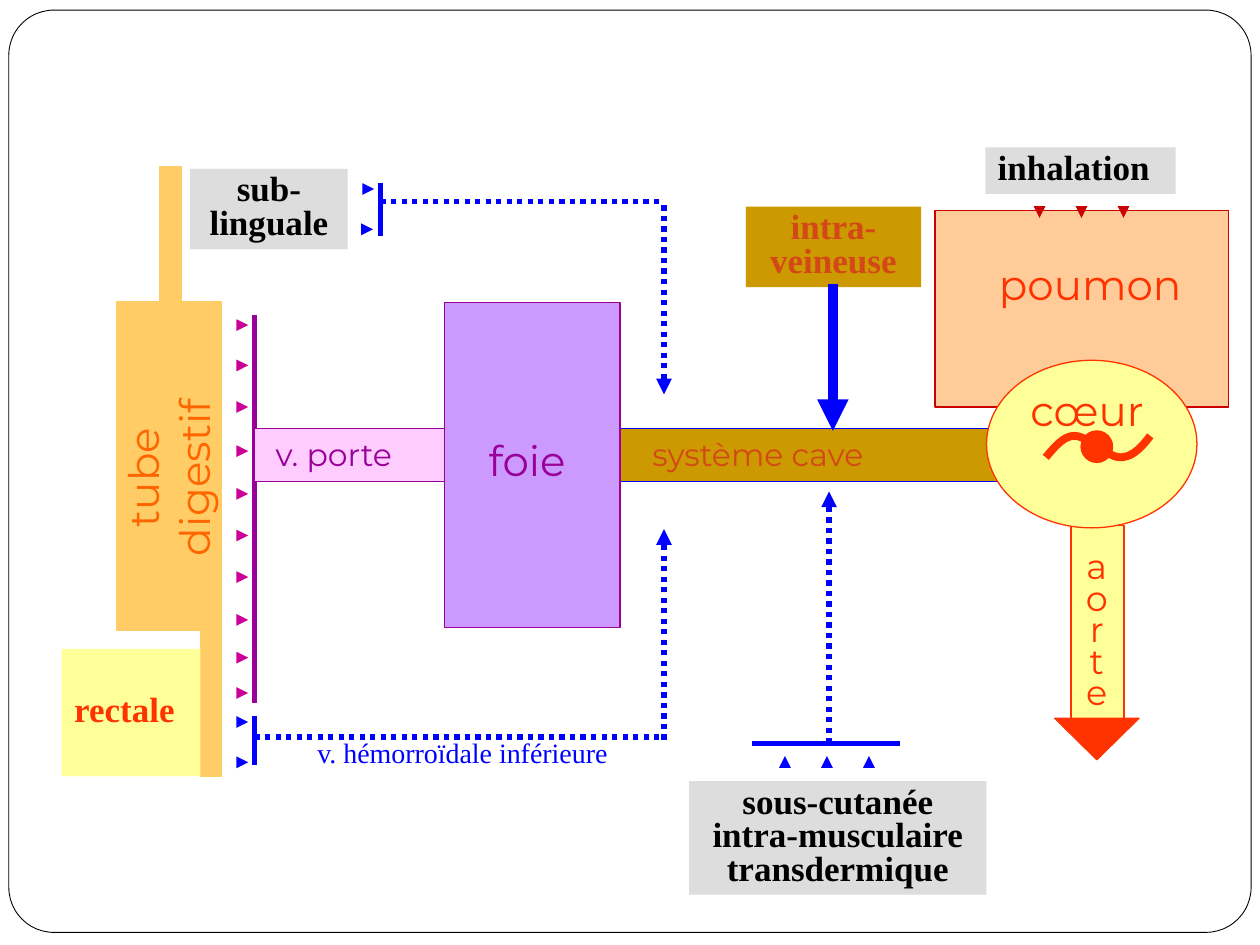
from dataclasses import dataclass

from lxml import etree
from pptx import Presentation
from pptx.dml.color import RGBColor
from pptx.enum import dml, shapes, text
from pptx.oxml import ns
from pptx.util import Inches, Pt

KIND = shapes.MSO_SHAPE
MID = text.PP_ALIGN.CENTER


@dataclass(frozen=True)
class Theme:
    sans: str = "Montserrat"
    serif: str = "Times New Roman"
    big: int = 24
    label: int = 20
    vein: int = 18
    note: int = 16
    black: str = "000000"
    white: str = "FFFFFF"
    grey: str = "DDDDDD"
    blue: str = "0000FF"
    red: str = "FF3300"
    dark: str = "CC0000"
    peach: str = "FFCC99"
    sand: str = "FFCC66"
    orange: str = "FF6600"
    yellow: str = "FFFF99"
    pink: str = "FFCCFF"
    lilac: str = "CC99FF"
    purple: str = "990099"
    rose: str = "CC0099"
    ochre: str = "CC9900"
    rust: str = "D34817"


T = Theme()


def rgb(code):
    return RGBColor.from_string(code)


class Box:
    """A region of the slide; all places are measured from its corner."""

    def __init__(self, slide, left, top):
        self.pool, self.left, self.top = slide.shapes, left, top

    def spot(self, x, y):
        return Inches(self.left + x), Inches(self.top + y)

    def shape(self, x, y, w, h, fill, line=None, kind=KIND.RECTANGLE, width=0.75):
        item = self.pool.add_shape(kind, *self.spot(x, y), Inches(w), Inches(h))
        item.shadow.inherit = False
        item.fill.solid()
        item.fill.fore_color.rgb = rgb(fill)
        if line:
            item.line.color.rgb = rgb(line)
            item.line.width = Pt(width)
        else:
            item.line.fill.background()
        return item

    def words(self, x, y, w, h, lines, size, color, font=T.sans, align=None,
              gap=None, bold=False, fill=None, anchor=text.MSO_ANCHOR.TOP):
        item = self.pool.add_textbox(*self.spot(x, y), Inches(w), Inches(h))
        if fill:
            item.fill.solid()
            item.fill.fore_color.rgb = rgb(fill)
        frame = item.text_frame
        frame.word_wrap = False
        frame.vertical_anchor = anchor
        frame.text = "\n".join(lines)
        for para in frame.paragraphs:
            para.alignment, para.line_spacing = align, gap
            para.font.name, para.font.size = font, Pt(size)
            para.font.bold, para.font.color.rgb = bold, rgb(color)
        return item

    def label(self, x, y, w, h, lines, color=T.black, fill=T.grey, align=MID,
              anchor=text.MSO_ANCHOR.TOP):
        return self.words(x, y, w, h, lines, T.label, color, T.serif, align,
                          0.8, True, fill, anchor)

    def line(self, x1, y1, x2, y2, color=T.blue, width=3, dots=False, head=False):
        item = self.pool.add_connector(shapes.MSO_CONNECTOR.STRAIGHT,
                                       *self.spot(x1, y1), *self.spot(x2, y2))
        item.line.color.rgb = rgb(color)
        item.line.width = Pt(width)
        if dots:
            item.line.dash_style = dml.MSO_LINE.ROUND_DOT
        props = item.element.spPr
        if head:
            tip = etree.SubElement(props.find(ns.qn("a:ln")), ns.qn("a:tailEnd"))
            tip.set("type", "triangle")
        etree.SubElement(props, ns.qn("a:effectLst"))

    def ticks(self, starts, dx, dy, color=T.blue):
        for x, y in starts:
            self.line(x, y, x + dx, y + dy, color, 2.25, head=True)


def lung(box):
    box.shape(0, 0.5, 2.33, 1.56, T.peach, T.dark)
    box.ticks([(0.83 + i / 3, 0.48) for i in range(3)], 0, 0.08, T.dark)
    box.label(0.4, 0, 1.51, 0.37, ["inhalation"], align=None)
    box.words(0.41, 0.83, 1.65, 0.5, ["poumon"], T.big, T.red)


def gut(box):
    for place in ((0.78, 0, 0.17, 1.08), (0.44, 1.07, 0.83, 2.61),
                  (1.1, 3.67, 0.17, 1.17)):
        box.shape(*place, T.sand, T.sand)
    name = box.words(0.06, 2.02, 1.57, 0.9, ["tube", "digestif"], T.big,
                     T.orange, align=MID)
    name.rotation = 270
    box.label(0, 3.83, 1.1, 1.01, ["rectale"], T.red, T.yellow, None,
              text.MSO_ANCHOR.MIDDLE)
    # Absorption through the gut wall
    rows = (1.26, 1.58, 1.91, 2.26, 2.6, 2.93, 3.26, 3.6, 3.9, 4.18)
    box.ticks([(1.4, y) for y in rows], 0.08, 0, T.rose)
    box.line(1.53, 1.18, 1.53, 4.26, T.purple)


def veins(box):
    box.shape(0, 1, 1.58, 0.42, T.pink, T.purple)
    box.words(0.07, 1, 1.24, 0.4, ["v. porte"], T.vein, T.purple)
    box.shape(2.3, 1, 5.08, 0.42, T.ochre, T.blue)
    box.words(3.06, 1, 2.09, 0.4, ["système cave"], T.vein, T.rust)
    # Liver
    box.shape(1.51, 0, 1.39, 2.58, T.lilac, T.purple)
    box.words(1.76, 1, 0.89, 0.5, ["foie"], T.big, T.purple)


def mouth(box):
    box.label(0, 0, 1.25, 0.64, ["sub-", "linguale"])
    box.ticks([(1.38, 0.16), (1.37, 0.48)], 0.08, 0)
    box.line(1.51, 0.11, 1.51, 0.53)
    box.line(1.51, 0.26, 3.76, 0.26, dots=True)
    box.line(3.76, 0.29, 3.76, 1.79, dots=True, head=True)


def rectum(box):
    box.ticks([(0, 1.53), (0, 1.85)], 0.08, 0)
    box.line(0.13, 1.48, 0.13, 1.87)
    box.line(0.13, 1.65, 3.38, 1.65, dots=True)
    box.line(3.38, 1.67, 3.38, 0, dots=True, head=True)
    box.words(0.53, 1.59, 2.73, 0.37, ["v. hémorroïdale inférieure"], T.note,
              T.blue, T.serif)


def needle(box):
    box.label(0, 0, 1.39, 0.64, ["intra-", "veineuse"], T.rust, T.ochre)
    box.line(0.69, 0.61, 0.69, 1.78, width=6, head=True)


def skin(box):
    box.line(0.5, 2, 1.67, 2)
    box.line(1.11, 2, 1.11, 0, dots=True, head=True)
    box.ticks([(0.76 + i / 3, 2.18) for i in range(3)], 0, -0.08)
    box.label(0, 2.3, 2.36, 0.9,
              ["sous-cutanée", "intra-musculaire", "transdermique"])


def bend(p, q, r, s, steps=12):
    """Points along a cubic curve, without the first."""
    for i in range(1, steps + 1):
        t = i / steps
        yield tuple((1 - t) ** 3 * a + 3 * t * (1 - t) ** 2 * b
                    + 3 * t * t * (1 - t) * c + t ** 3 * d
                    for a, b, c, d in zip(p, q, r, s))


def heart(box):
    # Aorta
    box.shape(0.67, 1.31, 0.42, 1.54, T.yellow, T.red)
    box.shape(0, 0, 1.67, 1.33, T.yellow, T.red, KIND.OVAL)
    # Valve
    knots = [(0.47, 0.77), (0.54, 0.69), (0.61, 0.6), (0.7, 0.6), (0.8, 0.6),
             (0.96, 0.77), (1.06, 0.77), (1.16, 0.77), (1.23, 0.69), (1.3, 0.6)]
    curve = [box.spot(*point) for i in (0, 3, 6) for point in bend(*knots[i:i + 4])]
    pen = box.pool.build_freeform(*box.spot(*knots[0]))
    pen.add_line_segments(curve, close=False)
    wave = pen.convert_to_shape()
    wave.shadow.inherit = False
    wave.fill.background()
    wave.line.color.rgb = rgb(T.red)
    wave.line.width = Pt(4.5)
    box.shape(0.75, 0.56, 0.25, 0.25, T.red, T.red, KIND.OVAL)
    # Names and flow
    box.words(0.68, 1.49, 0.39, 1.35, list("aorte"), T.label, T.red,
              align=MID, gap=0.75)
    box.words(0.25, 0.14, 1.13, 0.5, ["cœur"], T.big, T.red)
    tip = box.shape(0.54, 2.84, 0.67, 0.33, T.red, T.red, KIND.ISOSCELES_TRIANGLE)
    tip.rotation = 180


def main():
    deck = Presentation()
    deck.slide_width, deck.slide_height = Inches(10), Inches(7.5)
    slide = deck.slides.add_slide(deck.slide_layouts[6])
    edge = Box(slide, 0.07, 0.08).shape(0, 0, 9.86, 7.32, T.white, T.black,
                                        KIND.ROUNDED_RECTANGLE, 0.5)
    edge.adjustments[0] = 0.049
    for draw, left, top in ((lung, 7.42, 1.17), (gut, 0.49, 1.32),
                            (veins, 2.02, 2.4), (mouth, 1.51, 1.34),
                            (rectum, 1.89, 4.2), (needle, 5.92, 1.64),
                            (skin, 5.47, 3.9), (heart, 7.83, 2.86)):
        draw(Box(slide, left, top))
    deck.save("out.pptx")


if __name__ == "__main__":
    main()
